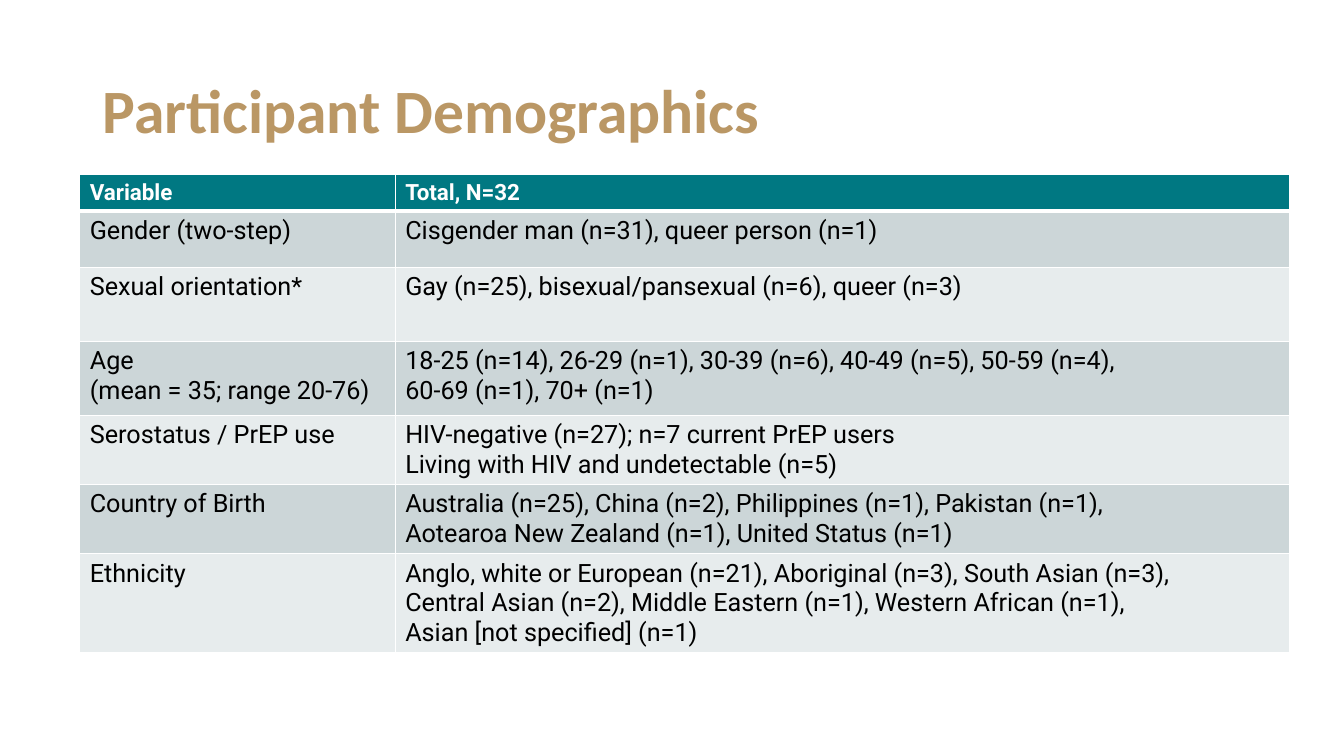
from dataclasses import dataclass

from lxml.etree import SubElement as Sub
from pptx import Presentation
from pptx.dml.color import RGBColor as Rgb
from pptx.enum.text import MSO_ANCHOR as Anchor
from pptx.oxml.ns import qn
from pptx.util import Cm, Pt


@dataclass(frozen=True)
class Theme:
    gold: str = "BA9765"
    teal: str = "007882"
    dark: str = "CCD6D8"
    light: str = "E7ECED"
    white: str = "FFFFFF"
    black: str = "000000"
    title_font: str = "Calibri"
    body_font: str = "Roboto"
    title_size: int = 44
    head_size: int = 16
    body_size: int = 18
    thin: int = 1
    thick: int = 3


@dataclass(frozen=True)
class Row:
    height: float
    label: str
    value: str


THEME = Theme()
WIDTHS = (7.95, 22.53)
ROWS = (
    Row(0.86, "Variable", "Total, N=32"),
    Row(1.43, "Gender (two-step)", "Cisgender man (n=31), queer person (n=1)"),
    Row(1.86, "Sexual orientation*", "Gay (n=25), bisexual/pansexual (n=6), queer (n=3)"),
    Row(1.86, "Age \n(mean = 35; range 20-76)",
        "18-25 (n=14), 26-29 (n=1), 30-39 (n=6), 40-49 (n=5), 50-59 (n=4), \n"
        "60-69 (n=1), 70+ (n=1)"),
    Row(1.65, "Serostatus / PrEP use",
        "HIV-negative (n=27); n=7 current PrEP users\n"
        "Living with HIV and undetectable (n=5)"),
    Row(1.65, "Country of Birth",
        "Australia (n=25), China (n=2), Philippines (n=1), Pakistan (n=1), \n"
        "Aotearoa New Zealand (n=1), United Status (n=1)"),
    Row(2.36, "Ethnicity",
        "Anglo, white or European (n=21), Aboriginal (n=3), South Asian (n=3), \n"
        "Central Asian (n=2), Middle Eastern (n=1), Western African (n=1), \n"
        "Asian [not specified] (n=1)"),
)


def style(para, face: str, size: int, tint: str, bold: bool) -> None:
    for run in para.runs:
        font = run.font
        font.name, font.size, font.bold = face, Pt(size), bold
        font.color.rgb = Rgb.from_string(tint)


def edge(cell, side: str, width: int, spot: int) -> None:
    props = cell._tc.get_or_add_tcPr()
    line = Sub(props, qn(f"a:ln{side}"), w=str(Pt(width)))
    fill = Sub(line, qn("a:solidFill"))
    Sub(fill, qn("a:srgbClr"), val=THEME.white)
    props.insert(spot, line)


def fill_cell(cell, text: str, index: int) -> None:
    head = index == 0
    para = cell.text_frame.paragraphs[0]
    para.text = text
    if head:
        style(para, THEME.body_font, THEME.head_size, THEME.white, True)
        back = THEME.teal
    else:
        style(para, THEME.body_font, THEME.body_size, THEME.black, False)
        back = THEME.dark if index % 2 else THEME.light
    cell.fill.solid()
    cell.fill.fore_color.rgb = Rgb.from_string(back)
    border = {"T": index == 1, "B": head}
    for spot, side in enumerate("LRTB"):
        edge(cell, side, THEME.thick if border.get(side) else THEME.thin, spot)


def add_title(slide) -> None:
    title = slide.shapes.title
    title.left, title.top = Cm(2.33), Cm(1.02)
    title.width, title.height = Cm(29.21), Cm(3.68)
    frame = title.text_frame
    frame.text = "Participant Demographics"
    frame.word_wrap = True
    frame.vertical_anchor = Anchor.MIDDLE
    para = frame.paragraphs[0]
    para.line_spacing = 0.9
    para.alignment = 1
    style(para, THEME.title_font, THEME.title_size, THEME.gold, True)


def add_grid(slide) -> None:
    high = sum(row.height for row in ROWS)
    grid = slide.shapes.add_table(
        len(ROWS), len(WIDTHS), Cm(2.01), Cm(4.4), Cm(sum(WIDTHS)), Cm(high)
    ).table
    for col, width in zip(grid.columns, WIDTHS):
        col.width = Cm(width)
    for index, row in enumerate(ROWS):
        grid.rows[index].height = Cm(row.height)
        for col, text in enumerate((row.label, row.value)):
            fill_cell(grid.cell(index, col), text, index)


def main() -> None:
    deck = Presentation()
    deck.slide_width, deck.slide_height = Cm(33.87), Cm(19.05)
    slide = deck.slides.add_slide(deck.slide_layouts[5])
    add_title(slide)
    add_grid(slide)
    deck.save("out.pptx")


if __name__ == "__main__":
    main()
